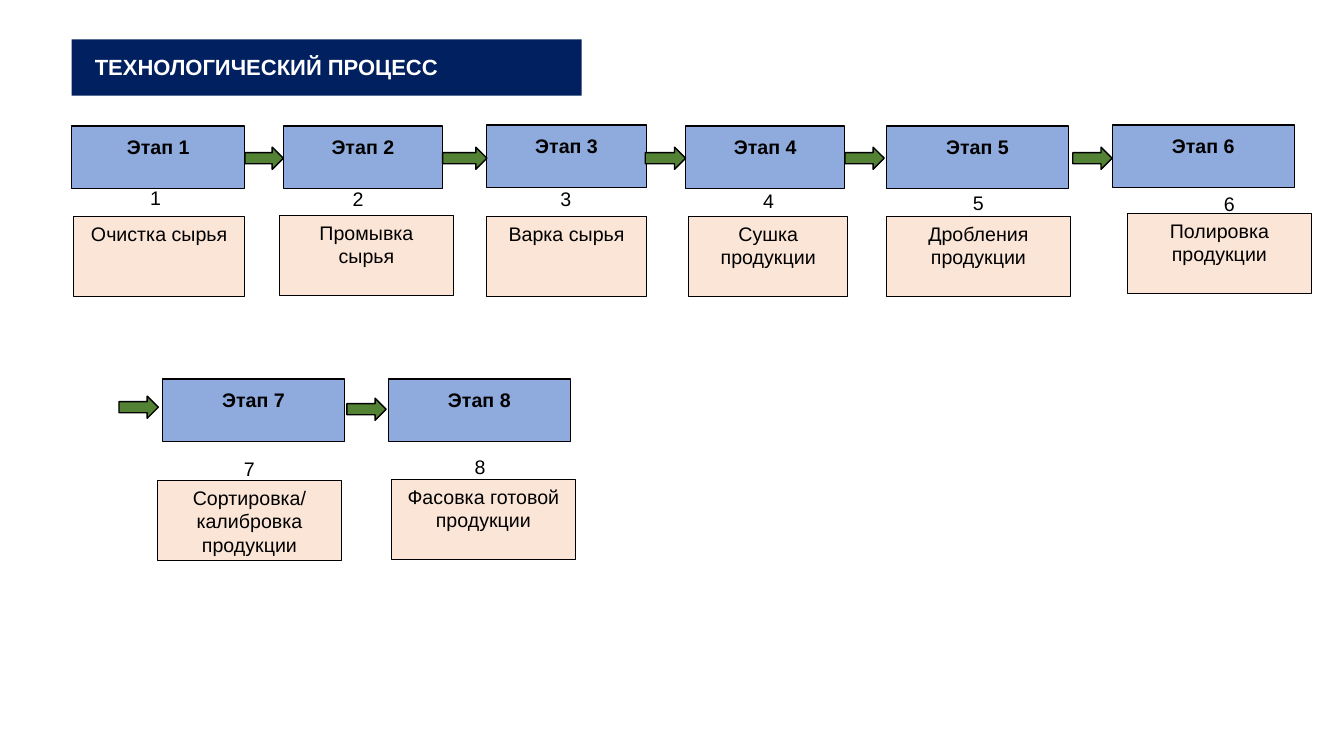
from pptx import Presentation
from pptx.dml.color import RGBColor
from pptx.enum.shapes import MSO_SHAPE
from pptx.enum.text import MSO_ANCHOR, PP_ALIGN
from pptx.util import Emu, Pt

TITLE = "ТЕХНОЛОГИЧЕСКИЙ ПРОЦЕСС"
STAGES = [
    {"step": "Очистка сырья", "head": (71, 125, 172), "number": (139, 180), "body": (73, 215, 170)},
    {"step": "Промывка сырья", "head": (281, 125, 158), "number": (340, 181), "body": (277, 214, 173)},
    {"step": "Варка сырья", "head": (483, 124, 158), "number": (546, 181), "body": (483, 215, 158)},
    {"step": "Сушка продукции", "head": (680, 125, 158), "number": (747, 183), "body": (683, 215, 158)},
    {"step": "Дробления продукции", "head": (879, 125, 181), "number": (955, 184), "body": (879, 215, 183)},
    {"step": "Полировка продукции", "head": (1103, 124, 181), "number": (1204, 186), "body": (1118, 212, 183)},
    {"step": "Сортировка/калибровка продукции", "head": (161, 376, 181), "number": (232, 448), "body": (156, 477, 183)},
    {"step": "Фасовка готовой продукции", "head": (385, 376, 181), "number": (461, 446), "body": (388, 476, 183)},
]
ARROWS = [
    (243, 146, 38), (439, 146, 44), (640, 146, 40), (838, 146, 39),
    (1064, 146, 39), (118, 393, 39), (344, 395, 39),
]
HEAD_HEIGHT, BODY_HEIGHT, ARROW_HEIGHT = 62, 79, 22
NUMBER_WIDTH, NUMBER_HEIGHT = 31, 33
EMU_PER_PX = 9144


def px(value):
    return Emu(value * EMU_PER_PX)


def color(value):
    return RGBColor.from_string(value)


def add_block(slide, kind, box, fill, line_width=0.75):
    shape = slide.shapes.add_shape(kind, *map(px, box))
    shape.shadow.inherit = False
    shape.fill.solid()
    shape.fill.fore_color.rgb = color(fill)
    if line_width:
        shape.line.color.rgb = color("000000")
        shape.line.width = Pt(line_width)
    else:
        shape.line.fill.background()
    return shape


def write(shape, text, size=14, ink="000000", bold=False, align=PP_ALIGN.CENTER,
          anchor=MSO_ANCHOR.TOP, insets=(10, 5, 10, 5)):
    frame = shape.text_frame
    frame.word_wrap = True
    frame.vertical_anchor = anchor
    frame.margin_left, frame.margin_top, frame.margin_right, frame.margin_bottom = map(px, insets)
    paragraph = frame.paragraphs[0]
    paragraph.alignment = align
    run = paragraph.add_run()
    run.text = text
    run.font.name = "Arial"
    run.font.size = Pt(size)
    run.font.bold = bold
    run.font.color.rgb = color(ink)


def main():
    presentation = Presentation()
    presentation.slide_width, presentation.slide_height = px(1333), px(750)
    slide = presentation.slides.add_slide(presentation.slide_layouts[6])

    add_block(slide, MSO_SHAPE.RECTANGLE, (71, 39, 506, 56), "002060", line_width=0)
    title = slide.shapes.add_textbox(*map(px, (92, 51, 391, 28)))
    write(title, TITLE, size=15.7, ink="FFFFFF", bold=True, align=PP_ALIGN.LEFT,
          anchor=MSO_ANCHOR.MIDDLE, insets=(2, 2, 0, 0))

    for number, stage in enumerate(STAGES, 1):
        head = add_block(slide, MSO_SHAPE.RECTANGLE, (*stage["head"], HEAD_HEIGHT), "8FAADC")
        write(head, f"Этап {number}", bold=True, insets=(10, 9, 10, 5))
        body = add_block(slide, MSO_SHAPE.RECTANGLE, (*stage["body"], BODY_HEIGHT), "FBE5D6")
        write(body, stage["step"])
        label = slide.shapes.add_textbox(*map(px, (*stage["number"], NUMBER_WIDTH, NUMBER_HEIGHT)))
        write(label, str(number), align=PP_ALIGN.LEFT, insets=(10, 5, 0, 5))

    for arrow in ARROWS:
        add_block(slide, MSO_SHAPE.RIGHT_ARROW, (*arrow, ARROW_HEIGHT), "548235", line_width=1)

    presentation.save("out.pptx")


if __name__ == "__main__":
    main()
